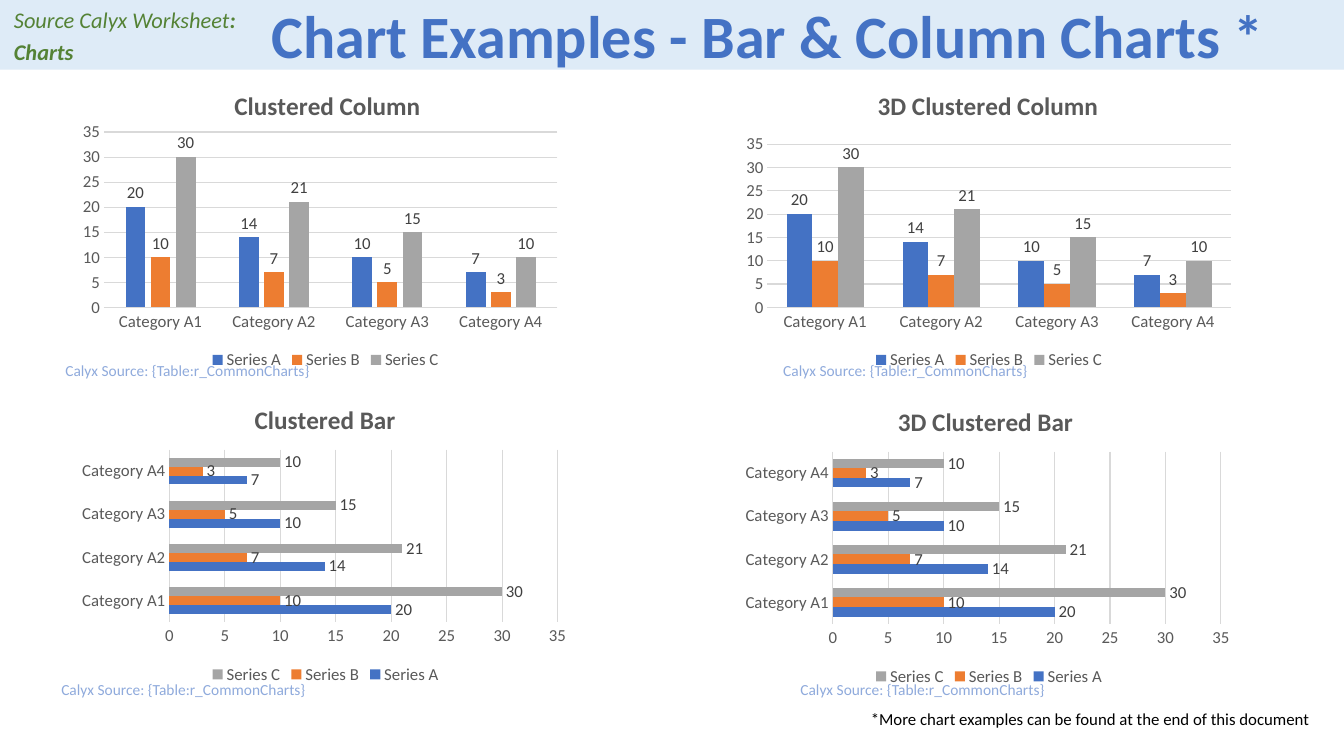
from lxml import etree
from pptx import Presentation, util as u
from pptx.chart.data import CategoryChartData
from pptx.dml.color import RGBColor
from pptx.enum import chart as ch, shapes, text
from pptx.oxml.ns import qn

# Content
TITLE = "Chart Examples - Bar & Column Charts *"
SOURCE_SHEET = [
    [("Source Calyx Worksheet", False), (":", True)],
    [("Charts", True)],
]
CAPTION = "Calyx Source: {Table:r_CommonCharts}"
FOOTNOTE = "*More chart examples can be found at the end of this document"
CATEGORIES = ["Category A1", "Category A2", "Category A3", "Category A4"]
SERIES = [
    ("Series A", (20, 14, 10, 7), "blue"),
    ("Series B", (10, 7, 5, 3), "orange"),
    ("Series C", (30, 21, 15, 10), "gray"),
]
COLUMN = ch.XL_CHART_TYPE.COLUMN_CLUSTERED
BAR = ch.XL_CHART_TYPE.BAR_CLUSTERED
# Title left edge and plot box (x, y, w, h) are shares of the chart frame
CHARTS = [
    dict(title="Clustered Column", kind=COLUMN, top=0.71, gap=219, overlap=-27,
         axis_line=True, title_x=0.31, plot=(0.06, 0.2, 0.9, 0.58), caption=(0.55, 3.53)),
    dict(title="3D Clustered Column", kind=COLUMN, top=0.71, gap=150, overlap=0,
         axis_line=False, title_x=0.27, plot=(0.06, 0.24, 0.92, 0.54), caption=(7.67, 3.53)),
    dict(title="Clustered Bar", kind=BAR, top=3.83, gap=182, overlap=0,
         axis_line=True, title_x=0.35, plot=(0.19, 0.21, 0.77, 0.57), caption=(0.51, 6.7)),
    dict(title="3D Clustered Bar", kind=BAR, top=3.85, gap=150, overlap=0,
         axis_line=False, title_x=0.31, plot=(0.19, 0.21, 0.77, 0.57), caption=(7.84, 6.7)),
]
COLORS = {
    "blue": "4472C4", "orange": "ED7D31", "gray": "A5A5A5", "band": "DEEBF7",
    "green": "548235", "caption": "8FAADC", "grid": "D9D9D9", "axis": "595959",
    "label": "404040", "black": "000000",
}
FONT = "Calibri"
WIDTH, HEIGHT = 13.33, 7.5
COLUMN_LEFTS = (0.73, 7.31)
CHART_W, CHART_H = 5, 3
TITLE_Y = 0.04


def rgb(name):
    return RGBColor.from_string(COLORS[name])


def set_font(font, size, color, bold=False, italic=False):
    font.name, font.size = FONT, u.Pt(size)
    font.bold, font.italic = bold, italic
    font.color.rgb = rgb(color)


def write(tf, paragraphs, size, color, bold=False, italic=False,
          align=text.PP_ALIGN.LEFT, after=0, spacing=None):
    """Fill a frame with a string, or with paragraphs of (text, bold) runs."""
    if isinstance(paragraphs, str):
        paragraphs = [[(paragraphs, bold)]]
    tf.word_wrap = True
    for i, runs in enumerate(paragraphs):
        p = tf.add_paragraph() if i else tf.paragraphs[0]
        p.alignment, p.space_after = align, u.Pt(after)
        if spacing:
            p.line_spacing = spacing
        for words, is_bold in runs:
            r = p.add_run()
            r.text = words
            set_font(r.font, size, color, is_bold, italic)


def add_text(slide, box, paragraphs, size, color, **style):
    s = slide.shapes.add_textbox(*map(u.Inches, box))
    write(s.text_frame, paragraphs, size, color, **style)


def set_layout(parent, after, **shares):
    """Place a chart part by shares of the chart frame."""
    for old in parent.findall(qn("c:layout")):
        parent.remove(old)
    layout = etree.Element(qn("c:layout"))
    manual = etree.SubElement(layout, qn("c:manualLayout"))
    for tag, value in shares.items():
        etree.SubElement(manual, qn("c:" + tag)).set("val", str(value))
    previous = parent.find(qn(after)) if after else None
    parent.insert(0 if previous is None else parent.index(previous) + 1, layout)


def style_axis(axis, line):
    axis.major_tick_mark = axis.minor_tick_mark = ch.XL_TICK_MARK.NONE
    set_font(axis.tick_labels.font, 12, "axis")
    if line:
        axis.format.line.color.rgb = rgb("grid")
        axis.format.line.width = u.Pt(0.75)
    else:
        axis.format.line.fill.background()


def add_bar_chart(slide, left, details):
    data = CategoryChartData()
    data.categories = CATEGORIES
    for name, values, _ in SERIES:
        data.add_series(name, values)
    frame = map(u.Inches, (left, details["top"], CHART_W, CHART_H))
    chart = slide.shapes.add_chart(details["kind"], *frame, data).chart
    set_font(chart.font, 10, "black")

    # Title and legend
    write(chart.chart_title.text_frame, details["title"], 18, "axis", bold=True,
          align=text.PP_ALIGN.CENTER)
    title = chart.chart_title._element
    set_layout(title, "c:tx", xMode="edge", yMode="edge", x=details["title_x"], y=TITLE_Y)
    chart.has_legend = True
    chart.legend.position = ch.XL_LEGEND_POSITION.BOTTOM
    chart.legend.include_in_layout = False
    set_font(chart.legend.font, 12, "axis")

    # Axes
    style_axis(chart.category_axis, details["axis_line"])
    values_axis = chart.value_axis
    style_axis(values_axis, False)
    values_axis.minimum_scale, values_axis.maximum_scale = 0, 35
    values_axis.major_unit = 5
    grid = values_axis.major_gridlines.format.line
    grid.color.rgb, grid.width = rgb("grid"), u.Pt(0.75)

    # Bars and their labels
    plot = chart.plots[0]
    plot.vary_by_categories = False
    plot.gap_width, plot.overlap = details["gap"], details["overlap"]
    for series, (_, _, color) in zip(plot.series, SERIES):
        series.format.fill.solid()
        series.format.fill.fore_color.rgb = rgb(color)
        labels = series.data_labels
        labels.show_value = True
        labels.position = ch.XL_LABEL_POSITION.OUTSIDE_END
        set_font(labels.font, 12, "label")
    x, y, w, h = details["plot"]
    area = chart._chartSpace.chart.plotArea
    set_layout(area, None, layoutTarget="inner", xMode="edge", yMode="edge",
               x=x, y=y, w=w, h=h)


def main():
    prs = Presentation()
    prs.slide_width, prs.slide_height = u.Inches(WIDTH), u.Inches(HEIGHT)
    slide = prs.slides.add_slide(prs.slide_layouts[6])

    # Header band, its title set right of the worksheet note
    band = slide.shapes.add_shape(shapes.MSO_SHAPE.RECTANGLE, 0, 0,
                                  prs.slide_width, u.Inches(0.69))
    band.shadow.inherit = False
    band.fill.solid()
    band.fill.fore_color.rgb = rgb("band")
    band.line.fill.background()
    tf = band.text_frame
    tf.vertical_anchor = text.MSO_ANCHOR.BOTTOM
    tf.margin_left, tf.margin_bottom = u.Inches(2), 0
    write(tf, TITLE, 42.9, "blue", bold=True, align=text.PP_ALIGN.CENTER, spacing=0.8)
    add_text(slide, (0.04, 0.01, 5.83, 0.7), SOURCE_SHEET, 16, "green",
             italic=True, after=4)

    # Two-by-two grid of charts with captions
    for i, details in enumerate(CHARTS):
        add_bar_chart(slide, COLUMN_LEFTS[i % 2], details)
        add_text(slide, (*details["caption"], 4.87, 0.29), CAPTION, 11, "caption")

    # Footnote
    add_text(slide, (6.15, 6.98, 6.94, 0.3), FOOTNOTE, 12, "black",
             align=text.PP_ALIGN.RIGHT)
    prs.save("out.pptx")


if __name__ == "__main__":
    main()
